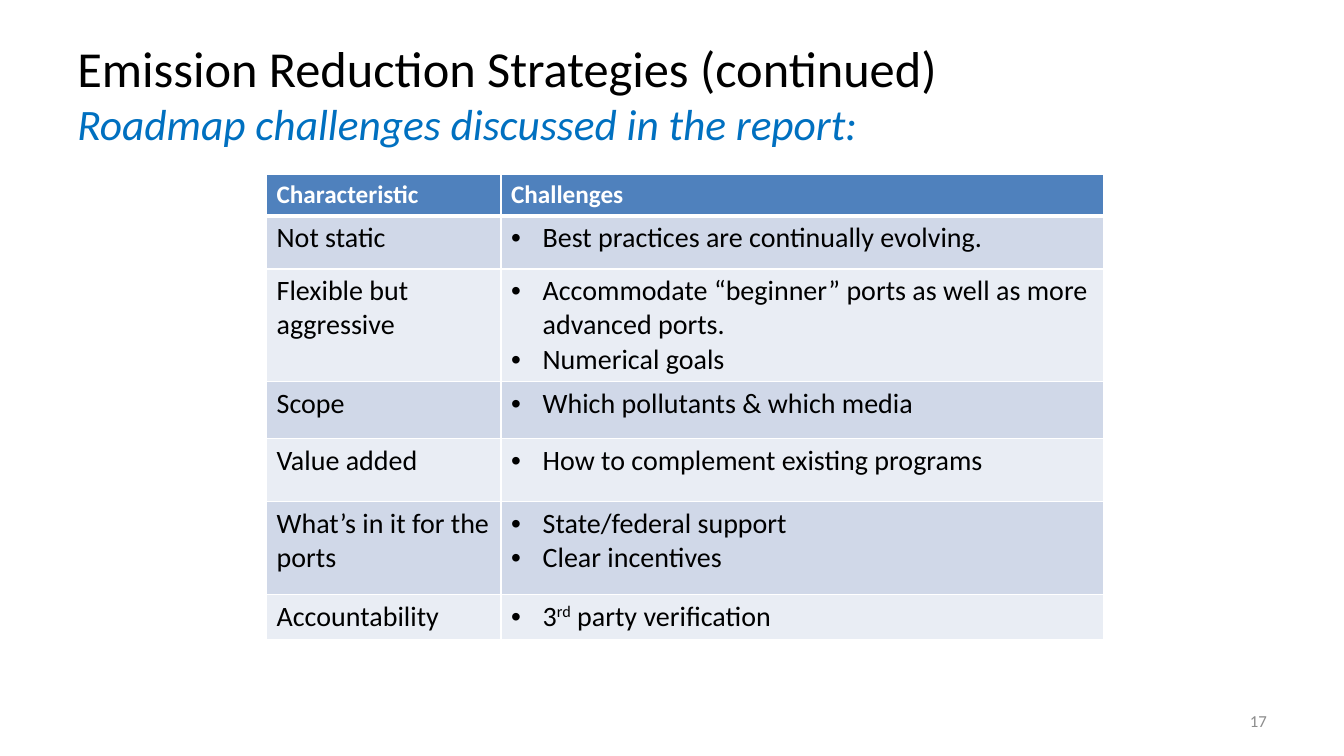
"""Build the slide on roadmap challenges for emission reduction strategies."""
from copy import deepcopy
from dataclasses import dataclass

from lxml import etree
from pptx import Presentation
from pptx.dml.color import RGBColor
from pptx.enum.text import MSO_ANCHOR, MSO_AUTO_SIZE, PP_ALIGN
from pptx.oxml.ns import qn
from pptx.util import Pt

LEFT, RIGHT = PP_ALIGN.LEFT, PP_ALIGN.RIGHT
MIDDLE = MSO_ANCHOR.MIDDLE
NO_AUTOFIT = MSO_AUTO_SIZE.NONE
TITLE_ONLY = 5


@dataclass(frozen=True)
class Theme:
    font: str = "Calibri"
    text: str = "000000"
    subtitle: str = "0070C0"
    header_fill: str = "4F81BD"
    header_text: str = "FFFFFF"
    bands: tuple = ("D0D8E8", "E9EDF4")
    border: str = "FFFFFF"
    number: str = "8C8C8C"
    title_size: int = 36
    subtitle_size: int = 31
    header_size: int = 18
    body_size: int = 20
    number_size: int = 12
    indent: float = 22.5


class SlideBuilder:
    def __init__(self, slide, theme):
        self.slide = slide
        self.theme = theme

    def format_run(self, run, size, color, bold=False, italic=False):
        font = run.font
        font.name, font.size = self.theme.font, Pt(size)
        font.bold, font.italic = bold, italic
        font.color.rgb = RGBColor.from_string(color)

    def place(self, shape, left, top, width, height):
        shape.left, shape.top = Pt(left), Pt(top)
        shape.width, shape.height = Pt(width), Pt(height)

    def title(self, heading, subtitle, box):
        theme = self.theme
        shape = self.slide.shapes.title
        self.place(shape, *box)
        frame = shape.text_frame
        frame.text = f"{heading}\v{subtitle}"
        frame.word_wrap, frame.auto_size = True, NO_AUTOFIT
        frame.vertical_anchor = MIDDLE
        paragraph = frame.paragraphs[0]
        paragraph.alignment = LEFT
        first, second = paragraph.runs
        self.format_run(first, theme.title_size, theme.text)
        self.format_run(second, theme.subtitle_size, theme.subtitle, italic=True)
        line_break = paragraph._p.find(qn("a:br"))
        line_break.append(deepcopy(first._r.get_or_add_rPr()))

    def bullet(self, paragraph):
        properties = paragraph._p.get_or_add_pPr()
        indent = Pt(self.theme.indent)
        properties.set("marL", str(indent))
        properties.set("indent", str(-indent))
        etree.SubElement(properties, qn("a:buFont"), typeface="Arial")
        etree.SubElement(properties, qn("a:buChar"), char="•")

    def borders(self, cell, bottom):
        properties = cell._tc.get_or_add_tcPr()
        widths = {"a:lnL": 1, "a:lnR": 1, "a:lnT": 1, "a:lnB": bottom}
        for position, (side, width) in enumerate(widths.items()):
            line = etree.Element(qn(side), w=str(Pt(width)))
            fill = etree.SubElement(line, qn("a:solidFill"))
            etree.SubElement(fill, qn("a:srgbClr"), val=self.theme.border)
            properties.insert(position, line)

    def cell(self, cell, lines, fill, size, color, bold=False, bulleted=False):
        cell.fill.solid()
        cell.fill.fore_color.rgb = RGBColor.from_string(fill)
        cell.text_frame.text = "\n".join(lines)
        for paragraph in cell.text_frame.paragraphs:
            pieces = paragraph.text.split("^")
            paragraph.text = pieces[0]
            for piece in pieces[1:]:
                paragraph.add_run().text = piece
            for position, run in enumerate(paragraph.runs):
                self.format_run(run, size, color, bold)
                if position % 2:
                    run._r.get_or_add_rPr().set("baseline", "30000")
            if bulleted:
                self.bullet(paragraph)

    def table(self, header, rows, left, top, widths, heights):
        theme = self.theme
        frame = self.slide.shapes.add_table(
            len(rows) + 1, len(widths), Pt(left), Pt(top), Pt(sum(widths)), Pt(sum(heights)))
        table = frame.table
        for column, width in zip(table.columns, widths):
            column.width = Pt(width)
        for row, height in zip(table.rows, heights):
            row.height = Pt(height)
        for index, label in enumerate(header):
            cell = table.cell(0, index)
            self.cell(cell, [label], theme.header_fill, theme.header_size,
                      theme.header_text, bold=True)
            self.borders(cell, bottom=3)
        for row_index, row in enumerate(rows, start=1):
            fill = theme.bands[(row_index - 1) % 2]
            for index, lines in enumerate(row):
                cell = table.cell(row_index, index)
                self.cell(cell, lines, fill, theme.body_size, theme.text, bulleted=index == 1)
                self.borders(cell, bottom=1)

    def slide_number(self, number, box):
        frame = self.slide.shapes.add_textbox(*map(Pt, box)).text_frame
        frame.text = number
        frame.word_wrap = True
        frame.vertical_anchor = MIDDLE
        paragraph = frame.paragraphs[0]
        paragraph.alignment = RIGHT
        self.format_run(paragraph.runs[0], self.theme.number_size, self.theme.number)


CHALLENGES = [
    (["Not static"], ["Best practices are continually evolving."]),
    (["Flexible but aggressive"],
     ["Accommodate “beginner” ports as well as more advanced ports.", "Numerical goals"]),
    (["Scope"], ["Which pollutants & which media"]),
    (["Value added"], ["How to complement existing programs"]),
    (["What’s in it for the ports"], ["State/federal support", "Clear incentives"]),
    (["Accountability"], ["3^rd^ party verification"]),
]


def main():
    presentation = Presentation()
    presentation.slide_width, presentation.slide_height = Pt(960), Pt(540)
    slide = presentation.slides.add_slide(presentation.slide_layouts[TITLE_ONLY])
    builder = SlideBuilder(slide, Theme())
    builder.title("Emission Reduction Strategies (continued)",
                  "Roadmap challenges discussed in the report:", (48, 21.6, 864, 90))
    builder.table(("Characteristic", "Challenges"), CHALLENGES, 190.4, 124.9,
                  widths=(167.5, 430.5), heights=(29, 38, 80.5, 40.5, 45, 66.5, 32))
    builder.slide_number("17", (688, 500.5, 224, 28.8))
    presentation.save("out.pptx")


if __name__ == "__main__":
    main()
